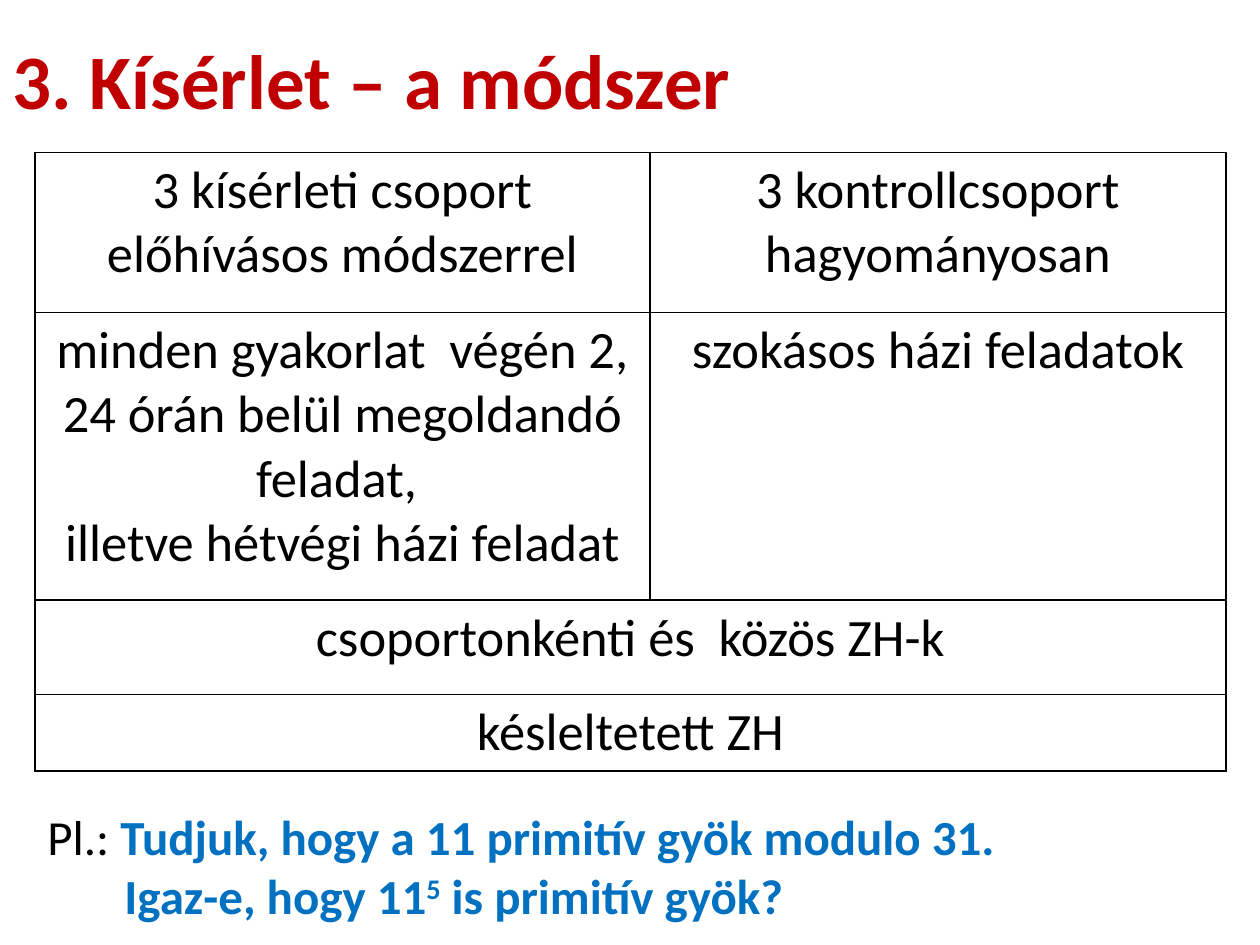
from pptx import Presentation
from pptx.dml.color import RGBColor
from pptx.enum.text import MSO_ANCHOR as Anchor, PP_ALIGN as Align
from pptx.oxml import parse_xml
from pptx.oxml.ns import nsdecls
from pptx.util import Pt

BLACK, RED, BLUE = "000000", "C00000", "0070C0"


def color(value):
    return RGBColor.from_string(value)


class SlideBuilder:
    font_name = "Calibri"

    def __init__(self, deck):
        self.page = deck.slides.add_slide(deck.slide_layouts[5])

    def style(self, span, size, ink=BLACK, bold=False):
        span.font.name = self.font_name
        span.font.size = Pt(size)
        span.font.bold = bold
        span.font.color.rgb = color(ink)

    def place(self, box, left, top, width, height):
        box.left, box.top = Pt(left), Pt(top)
        box.width, box.height = Pt(width), Pt(height)

    def title(self, text, *bounds):
        box = self.page.shapes.title
        self.place(box, *bounds)
        frame = box.text_frame
        frame.text = text
        frame.vertical_anchor = Anchor.MIDDLE
        para = frame.paragraphs[0]
        para.alignment = Align.LEFT
        self.style(para.runs[0], 44, RED, True)

    def border(self, cell):
        properties = cell._tc.get_or_add_tcPr()
        for side in "LRTB":
            properties.append(parse_xml(
                f'<a:ln{side} {nsdecls("a")} w="{Pt(1)}"><a:solidFill>'
                f'<a:srgbClr val="{BLACK}"/></a:solidFill></a:ln{side}>'))

    def table(self, rows, widths, heights, left, top):
        frame = self.page.shapes.add_table(
            len(rows), len(widths), Pt(left), Pt(top),
            Pt(sum(widths)), Pt(sum(heights)))
        table = frame.table
        table.first_row = table.horz_banding = False
        for column, width in zip(table.columns, widths):
            column.width = Pt(width)
        for r, (texts, height) in enumerate(zip(rows, heights)):
            table.rows[r].height = Pt(height)
            for c in range(len(widths)):
                cell = table.cell(r, c)
                self.border(cell)
                cell.fill.background()
            # A single text spans the whole row
            if len(texts) == 1:
                table.cell(r, 0).merge(table.cell(r, len(widths) - 1))
            for c, text in enumerate(texts):
                frame = table.cell(r, c).text_frame
                frame.text = text
                for para in frame.paragraphs:
                    para.alignment = Align.CENTER
                    for span in para.runs:
                        self.style(span, 30)

    def example(self, label, lines, hang, *bounds):
        box = self.page.shapes.add_textbox(*map(Pt, bounds))
        box.text_frame.word_wrap = True
        para = box.text_frame.paragraphs[0]
        # Hanging indent aligns the second line
        properties = para._p.get_or_add_pPr()
        properties.set("marL", str(Pt(hang)))
        properties.set("indent", str(-Pt(hang)))
        span = para.add_run()
        span.text = label
        self.style(span, 28)
        for index, parts in enumerate(lines):
            if index:
                para.add_line_break()
            for text, baseline in parts:
                span = para.add_run()
                span.text = text
                self.style(span, 28, BLUE, True)
                if baseline:
                    span._r.get_or_add_rPr().set("baseline", str(baseline * 1000))


def main():
    deck = Presentation()
    deck.slide_width, deck.slide_height = Pt(720), Pt(540)
    slide = SlideBuilder(deck)

    # Heading
    slide.title("3. Kísérlet – a módszer", 0, 0, 648, 90)

    # Comparison of the groups
    rows = [
        ["3 kísérleti csoport\nelőhívásos módszerrel",
         "3 kontrollcsoport\nhagyományosan"],
        ["minden gyakorlat  végén 2,\v24 órán belül megoldandó\n"
         "feladat, \villetve hétvégi házi feladat",
         "szokásos házi feladatok"],
        ["csoportonkénti és  közös ZH-k"],
        ["késleltetett ZH"],
    ]
    slide.table(rows, [351.5, 329], [91.4, 164.4, 53.8, 36.9], 20, 87.2)

    # Sample question
    lines = [
        [("Tudjuk, hogy a 11 primitív gyök modulo 31.", 0)],
        [("Igaz-e, hogy 11", 0), ("5", 30), (" is primitív gyök?", 0)],
    ]
    slide.example("Pl.: ", lines, 44, 20, 457.2, 680.5, 75)

    deck.save("out.pptx")


if __name__ == "__main__":
    main()
